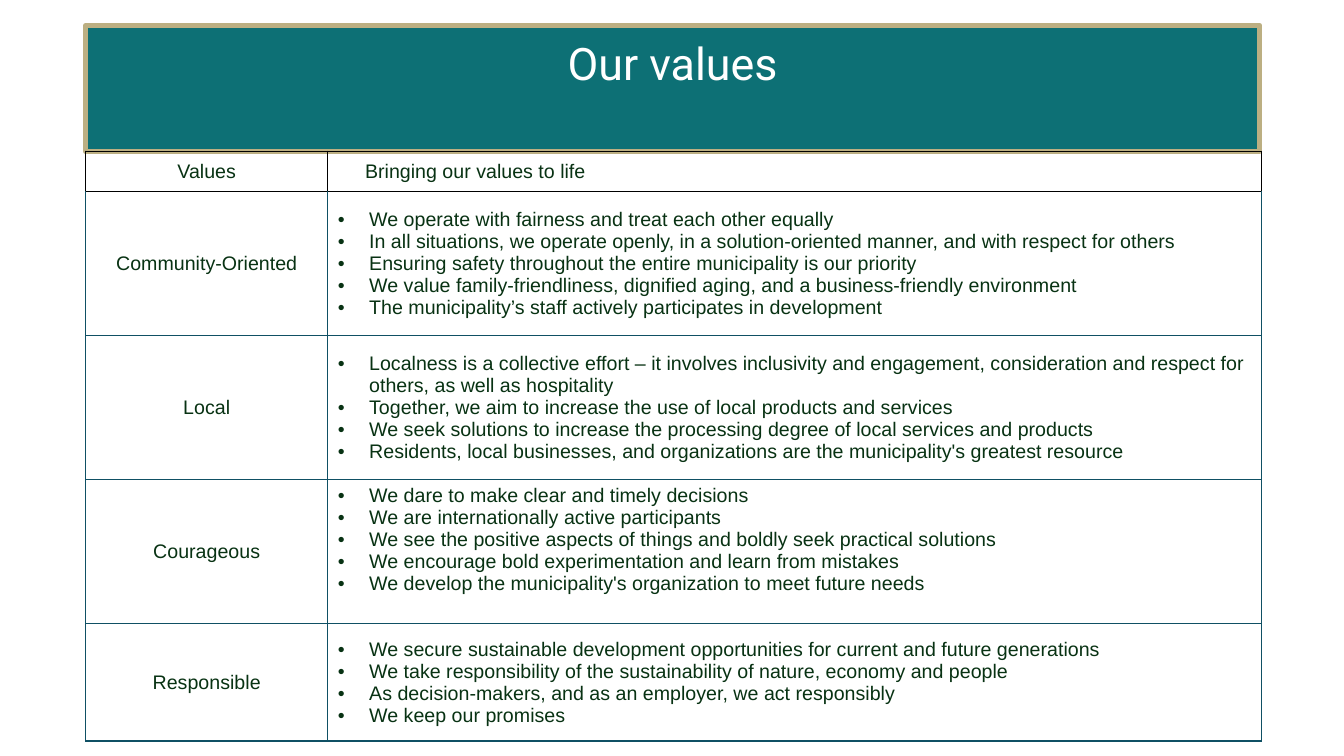
from typing import NamedTuple

from lxml import etree
from pptx import Presentation
from pptx.dml.color import RGBColor
from pptx.enum import text
from pptx.oxml import ns
from pptx.util import Cm, Pt

TEAL, SAND, WHITE = "0D7075", "BCAF82", "FFFFFF"
INK, BLACK, RULE = "083213", "000000", "0F5064"
LEFT, TABLE_TOP = 2.16, 3.81
COLUMN_WIDTHS = (6.1, 23.54)
HEADER_HEIGHT = 1.02
BULLET_INDENT = 0.79


class Value(NamedTuple):
    name: str
    actions: tuple[str, ...]
    height: float = 3.63
    anchor: text.MSO_ANCHOR = text.MSO_ANCHOR.MIDDLE
    tinted: bool = False


VALUES = (
    Value("Community-Oriented", (
        "We operate with fairness and treat each other equally",
        "In all situations, we operate openly, in a solution-oriented manner, "
        "and with respect for others",
        "Ensuring safety throughout the entire municipality is our priority",
        "We value family-friendliness, dignified aging, and a business-friendly environment",
        "The municipality’s staff actively participates in development",
    ), tinted=True),
    Value("Local", (
        "Localness is a collective effort – it involves inclusivity and engagement, "
        "consideration and respect for others, as well as hospitality",
        "Together, we aim to increase the use of local products and services",
        "We seek solutions to increase the processing degree of local services and products",
        "Residents, local businesses, and organizations are the municipality's greatest resource",
    )),
    Value("Courageous", (
        "We dare to make clear and timely decisions",
        "We are internationally active participants",
        "We see the positive aspects of things and boldly seek practical solutions",
        "We encourage bold experimentation and learn from mistakes",
        "We develop the municipality's organization to meet future needs",
    ), anchor=text.MSO_ANCHOR.TOP, tinted=True),
    Value("Responsible", (
        "We secure sustainable development opportunities for current and future generations",
        "We take responsibility of the sustainability of nature, economy and people",
        "As decision-makers, and as an employer, we act responsibly",
        "We keep our promises",
    ), height=2.95),
)


def colour(hex_code: str) -> RGBColor:
    return RGBColor.from_string(hex_code)


def style_font(font, size: float, name: str, hex_code: str) -> None:
    font.size, font.name = Pt(size), name
    font.color.rgb = colour(hex_code)


def fill_cell(cell, tinted: bool) -> None:
    """Leave the cell clear, or give it a 20 % opaque white."""
    if not tinted:
        cell.fill.background()
        return
    cell.fill.solid()
    cell.fill.fore_color.rgb = colour(WHITE)
    shade = cell._tc.tcPr.find(".//" + ns.qn("a:srgbClr"))
    etree.SubElement(shade, ns.qn("a:alpha"), val="20000")


def border_cell(cell, **sides: str) -> None:
    """Draw one-point borders; the sides are L, R, T and B, in that order."""
    properties = cell._tc.get_or_add_tcPr()
    for index, (side, hex_code) in enumerate(sides.items()):
        line = etree.Element(ns.qn(f"a:ln{side}"), w=str(Pt(1)))
        solid = etree.SubElement(line, ns.qn("a:solidFill"))
        etree.SubElement(solid, ns.qn("a:srgbClr"), val=hex_code)
        properties.insert(index, line)


def add_bullet(para) -> None:
    properties = para._p.get_or_add_pPr()
    properties.set("marL", str(Cm(BULLET_INDENT)))
    properties.set("indent", str(-Cm(BULLET_INDENT)))
    etree.SubElement(properties, ns.qn("a:buFont"), typeface="Arial")
    etree.SubElement(properties, ns.qn("a:buChar"), char="•")


def write_cell(cell, lines: tuple[str, ...], centred: bool = False, bulleted: bool = False) -> None:
    cell.vertical_anchor = text.MSO_ANCHOR.MIDDLE
    cell.text_frame.text = "\n".join(lines)
    for para in cell.text_frame.paragraphs:
        para.alignment = text.PP_ALIGN.CENTER if centred else text.PP_ALIGN.LEFT
        if bulleted:
            add_bullet(para)
        for span in para.runs:
            style_font(span.font, 14, "Arial", INK)


def format_title(title) -> None:
    title.left, title.top, title.width, title.height = Cm(LEFT), Cm(0.64), Cm(29.59), Cm(3.18)
    title.fill.solid()
    title.fill.fore_color.rgb = colour(TEAL)
    title.line.color.rgb = colour(SAND)
    title.line.width = Pt(3.5)
    frame = title.text_frame
    frame.text = "Our values"
    frame.word_wrap = True
    frame.auto_size = text.MSO_AUTO_SIZE.NONE
    frame.vertical_anchor = text.MSO_ANCHOR.TOP
    frame.margin_left = frame.margin_right = Cm(1)
    frame.margin_top, frame.margin_bottom = Cm(0.4), Cm(0.3)
    para = frame.paragraphs[0]
    para.alignment = text.PP_ALIGN.CENTER
    para.line_spacing = 0.9
    style_font(para.runs[0].font, 32, "Roboto", WHITE)


def add_values_table(page) -> None:
    heights = (HEADER_HEIGHT, *(value.height for value in VALUES))
    table = page.shapes.add_table(
        len(heights), len(COLUMN_WIDTHS), Cm(LEFT), Cm(TABLE_TOP),
        Cm(sum(COLUMN_WIDTHS)), Cm(sum(heights))).table
    table.first_row = table.horz_banding = False
    for column, width in zip(table.columns, COLUMN_WIDTHS):
        column.width = Cm(width)
    for row, height in zip(table.rows, heights):
        row.height = Cm(height)

    name_header, action_header = table.rows[0].cells
    write_cell(name_header, ("Values",), centred=True)
    write_cell(action_header, ("Bringing our values to life",))
    action_header.margin_left = Cm(0.94)
    for cell in table.rows[0].cells:
        fill_cell(cell, False)
        border_cell(cell, L=BLACK, R=BLACK, T=BLACK, B=BLACK)

    for number, value in enumerate(VALUES, start=1):
        name_cell, action_cell = table.rows[number].cells
        write_cell(name_cell, (value.name,), centred=True)
        write_cell(action_cell, value.actions, bulleted=True)
        action_cell.vertical_anchor = value.anchor
        for cell in (name_cell, action_cell):
            fill_cell(cell, value.tinted)
            border_cell(cell, L=RULE, R=RULE, T=BLACK if number == 1 else RULE, B=RULE)


def main() -> None:
    deck = Presentation()
    deck.slide_width, deck.slide_height = Cm(33.87), Cm(19.05)
    page = deck.slides.add_slide(deck.slide_layouts[5])
    format_title(page.shapes.title)
    add_values_table(page)
    deck.save("out.pptx")


if __name__ == "__main__":
    main()
